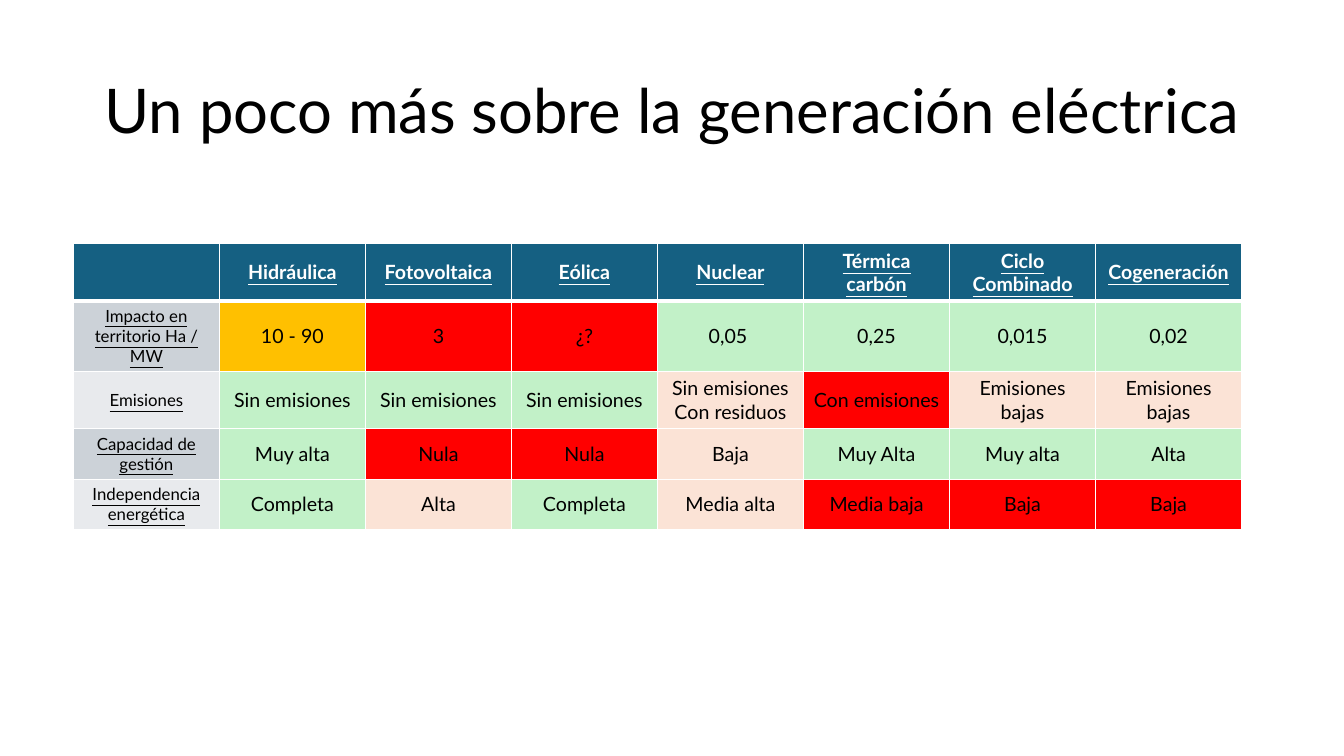
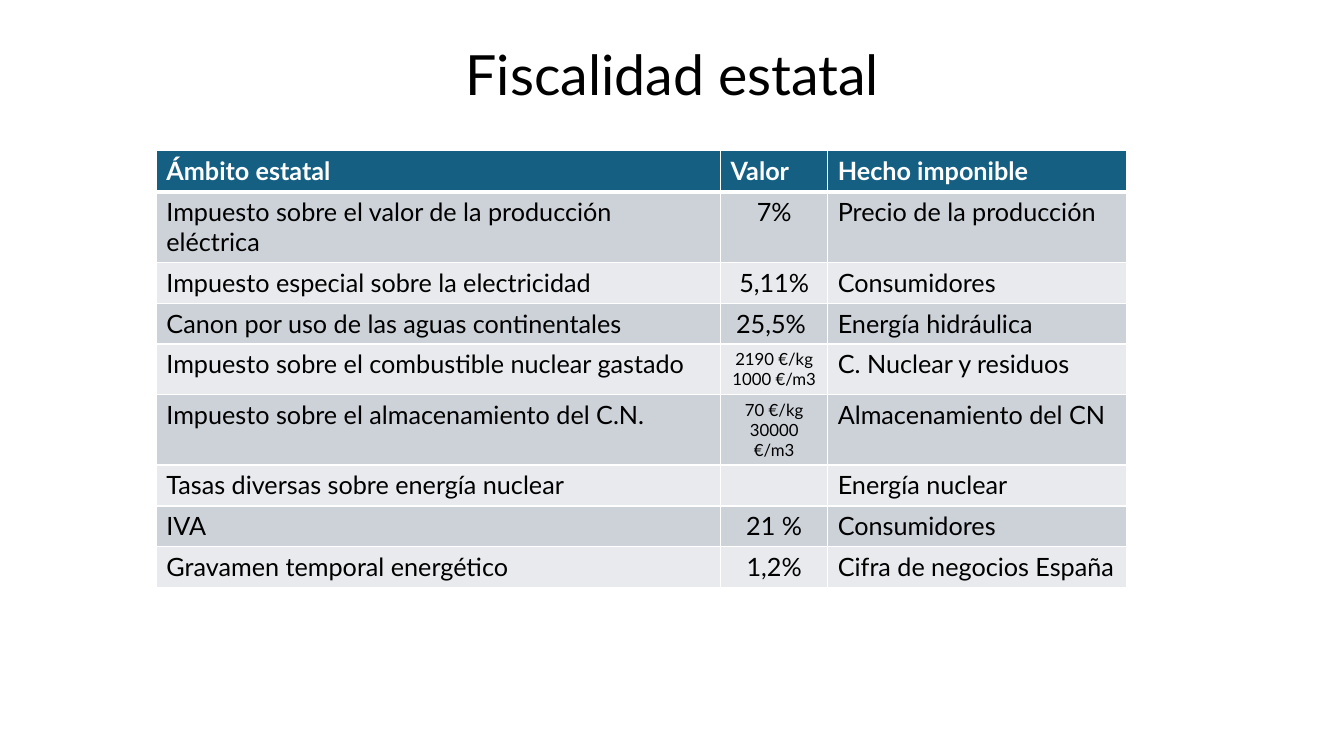
from dataclasses import dataclass
from typing import Optional

from lxml import etree
from pptx import Presentation
from pptx.dml.color import RGBColor
from pptx.enum.text import MSO_ANCHOR, MSO_AUTO_SIZE, PP_ALIGN
from pptx.oxml.ns import qn
from pptx.presentation import Presentation as Deck
from pptx.slide import Slide
from pptx.table import _Cell
from pptx.util import Cm, Pt

FONT = "Lato"
BLACK = RGBColor(0x00, 0x00, 0x00)
WHITE = RGBColor(0xFF, 0xFF, 0xFF)
HEADER = RGBColor(0x15, 0x60, 0x82)
BANDS = (RGBColor(0xCC, 0xD2, 0xD8), RGBColor(0xE8, 0xEA, 0xED))
GREEN = RGBColor(0xC2, 0xF1, 0xC8)
PEACH = RGBColor(0xFB, 0xE3, 0xD6)
RED = RGBColor(0xFF, 0x00, 0x00)
AMBER = RGBColor(0xFF, 0xC0, 0x00)

LEFT, CENTER = PP_ALIGN.LEFT, PP_ALIGN.CENTER
TOP, MIDDLE = MSO_ANCHOR.TOP, MSO_ANCHOR.MIDDLE
NO_AUTOFIT = MSO_AUTO_SIZE.NONE
TITLE_ONLY = 5
THIN, THICK = 1, 3


@dataclass(frozen=True)
class Entry:
    text: str
    size: float
    fill: Optional[RGBColor] = None
    align: PP_ALIGN = CENTER
    underline: bool = False


@dataclass(frozen=True)
class TableSpec:
    left: float
    top: float
    widths: list[float]
    heights: list[float]
    anchor: MSO_ANCHOR
    rows: list[list[Entry]]


SOURCES = ["", "Hidráulica", "Fotovoltaica", "Eólica", "Nuclear",
           "Térmica carbón", "Ciclo Combinado", "Cogeneración"]

RATINGS = [
    ("Impacto en territorio Ha / MW",
     [("10 - 90", AMBER), ("3", RED), ("¿?", RED), ("0,05 ", GREEN),
      ("0,25", GREEN), ("0,015", GREEN), ("0,02", GREEN)]),
    ("Emisiones",
     [("Sin emisiones", GREEN), ("Sin emisiones", GREEN), ("Sin emisiones", GREEN),
      ("Sin emisiones Con residuos", PEACH), ("Con emisiones", RED),
      ("Emisiones bajas", PEACH), ("Emisiones bajas", PEACH)]),
    ("Capacidad de gestión",
     [("Muy alta", GREEN), ("Nula", RED), ("Nula", RED), ("Baja", PEACH),
      ("Muy Alta", GREEN), ("Muy alta", GREEN), ("Alta", GREEN)]),
    ("Independencia energética",
     [("Completa", GREEN), ("Alta", PEACH), ("Completa", GREEN), ("Media alta", PEACH),
      ("Media baja", RED), ("Baja", RED), ("Baja", RED)]),
]

TAX_HEADINGS = ["Ámbito estatal", "Valor", "Hecho imponible"]

TAXES = [
    ("Impuesto sobre el valor de la producción eléctrica", "7%", "Precio de la producción"),
    ("Impuesto especial sobre la electricidad", "5,11%", "Consumidores"),
    ("Canon por uso de las aguas continentales", "25,5% ", "Energía hidráulica"),
    ("Impuesto sobre el combustible nuclear gastado", "2190 €/kg\n1000 €/m3",
     "C. Nuclear y residuos"),
    ("Impuesto sobre el almacenamiento del C.N.", "70 €/kg\n30000 €/m3",
     "Almacenamiento del CN"),
    ("Tasas diversas sobre energía nuclear", "", "Energía nuclear"),
    ("IVA", "21 %", "Consumidores"),
    ("Gravamen temporal energético", "1,2%", "Cifra de negocios España"),
]


def add_titled_slide(deck: Deck, text: str, size: float, height: float) -> Slide:
    page = deck.slides.add_slide(deck.slide_layouts[TITLE_ONLY])
    title = page.shapes.title
    title.left, title.top = Cm(2.34), Cm(1.02)
    title.width, title.height = Cm(29.21), Cm(height)
    frame = title.text_frame
    frame.text = text
    frame.auto_size = NO_AUTOFIT
    frame.vertical_anchor = MIDDLE
    para = frame.paragraphs[0]
    para.alignment = CENTER
    para.line_spacing = 0.9
    font = para.runs[0].font
    font.name, font.size = FONT, Pt(size)
    font.color.rgb = BLACK
    return page


def add_borders(cell: _Cell, top: int, bottom: int) -> None:
    properties = cell._tc.get_or_add_tcPr()
    sides = {"a:lnL": THIN, "a:lnR": THIN, "a:lnT": top, "a:lnB": bottom}
    for tag, points in sides.items():
        line = etree.SubElement(properties, qn(tag), w=str(Pt(points)))
        fill = etree.SubElement(line, qn("a:solidFill"))
        etree.SubElement(fill, qn("a:srgbClr"), val=str(WHITE))


def fill_cell(cell: _Cell, entry: Entry, row: int, anchor: MSO_ANCHOR) -> None:
    is_header = row == 0
    add_borders(cell, THICK if row == 1 else THIN, THICK if is_header else THIN)
    cell.fill.solid()
    band = HEADER if is_header else BANDS[(row - 1) % 2]
    cell.fill.fore_color.rgb = entry.fill or band
    cell.vertical_anchor = anchor
    cell.text_frame.text = entry.text
    for para in cell.text_frame.paragraphs:
        para.alignment = entry.align
        for span in para.runs:
            font = span.font
            font.name, font.size = FONT, Pt(entry.size)
            font.bold, font.underline = is_header, entry.underline
            font.color.rgb = WHITE if is_header else BLACK


def add_styled_table(page: Slide, spec: TableSpec) -> None:
    table = page.shapes.add_table(
        len(spec.heights), len(spec.widths), Cm(spec.left), Cm(spec.top),
        Cm(sum(spec.widths)), Cm(sum(spec.heights))).table
    for column, width in zip(table.columns, spec.widths):
        column.width = Cm(width)
    for table_row, height in zip(table.rows, spec.heights):
        table_row.height = Cm(height)
    for row, entries in enumerate(spec.rows):
        for column, entry in enumerate(entries):
            fill_cell(table.cell(row, column), entry, row, spec.anchor)


def generation_table() -> TableSpec:
    rows = [[Entry(name, 14, underline=True) for name in SOURCES]]
    for criterion, ratings in RATINGS:
        rows.append([Entry(criterion, 12, underline=True)]
                    + [Entry(text, 14, fill) for text, fill in ratings])
    return TableSpec(1.85, 6.14, [3.68] * len(SOURCES),
                     [1.44, 1.78, 1.44, 1.27, 1.27], MIDDLE, rows)


def tax_table() -> TableSpec:
    rows = [[Entry(heading, 18, align=LEFT) for heading in TAX_HEADINGS]]
    for tax, value, base in TAXES:
        rows.append([Entry(tax, 18, align=LEFT),
                     Entry(value, 12 if "\n" in value else 18),
                     Entry(base, 18, align=LEFT)])
    return TableSpec(3.94, 3.8, [14.22, 2.7, 7.53], [1.03] * len(rows), TOP, rows)


def main() -> None:
    deck = Presentation()
    deck.slide_width, deck.slide_height = Cm(33.87), Cm(19.05)
    page = add_titled_slide(deck, "Un poco más sobre la generación eléctrica", 44, 3.68)
    add_styled_table(page, generation_table())
    page = add_titled_slide(deck, "Fiscalidad estatal", 39.6, 1.85)
    add_styled_table(page, tax_table())
    deck.save("out.pptx")


if __name__ == "__main__":
    main()
